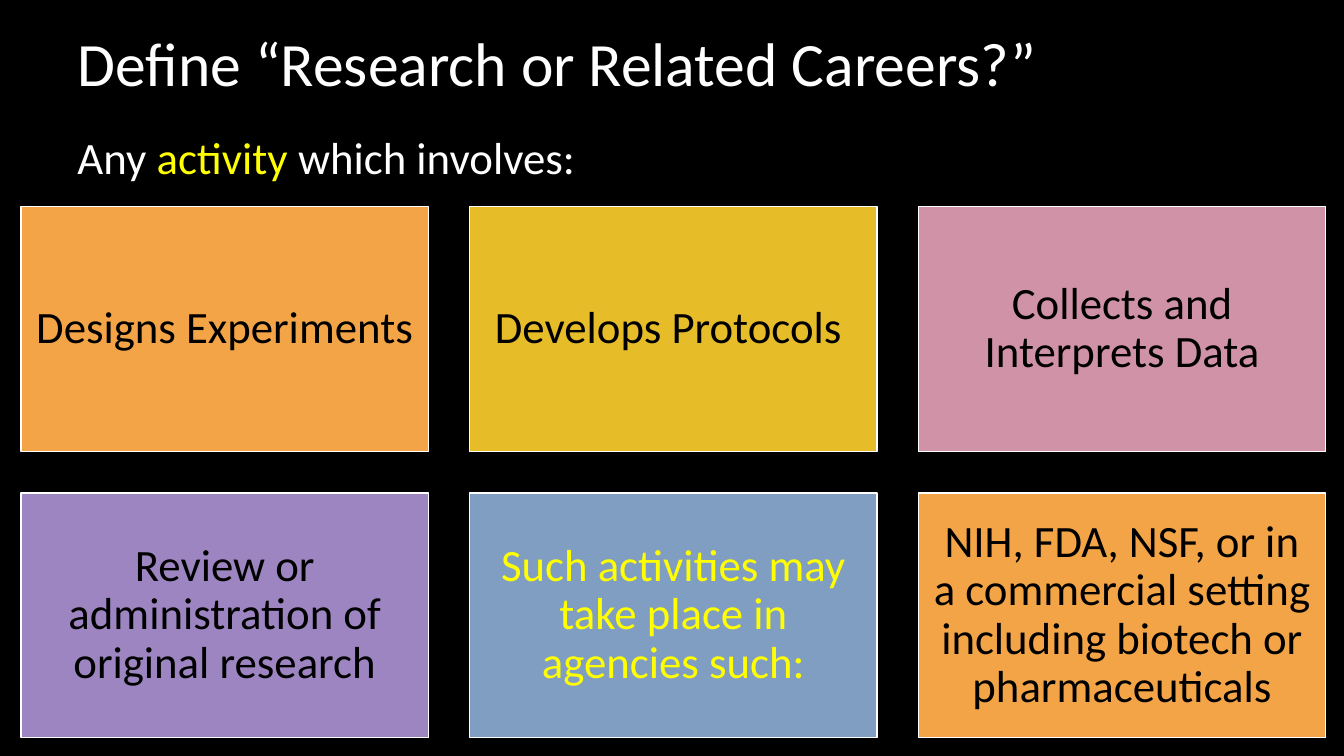
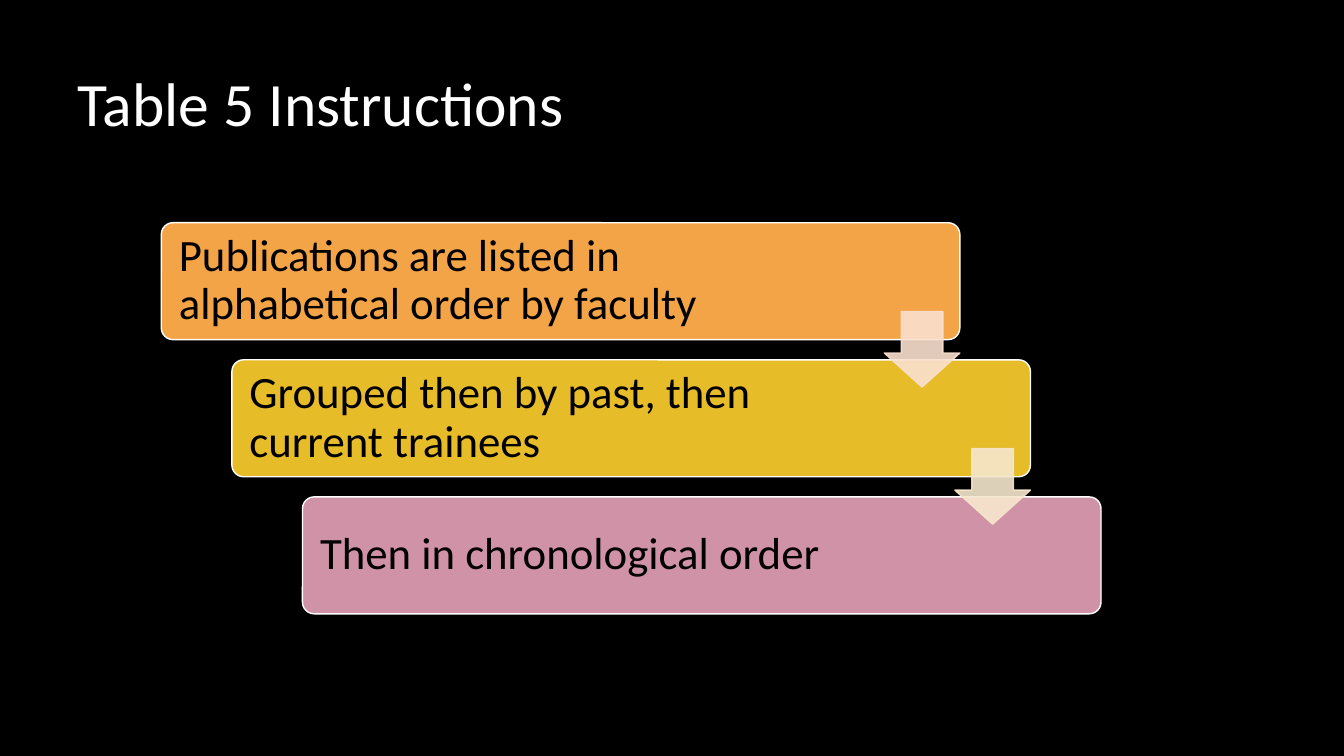
from dataclasses import dataclass

import pptx
import pptx.dml.color
import pptx.enum.shapes
import pptx.enum.text
import pptx.oxml.ns
import pptx.presentation
import pptx.shapes.autoshape
import pptx.slide
import pptx.text.text
import pptx.util
from lxml import etree

Inches = pptx.util.Inches
Pt = pptx.util.Pt
Align = pptx.enum.text.PP_ALIGN
Anchor = pptx.enum.text.MSO_ANCHOR
Preset = pptx.enum.shapes.MSO_SHAPE


@dataclass(frozen=True)
class Theme:
    background: str = "000000"
    light: str = "FFFFFF"
    dark: str = "000000"
    highlight: str = "FFFF00"
    orange: str = "F3A447"
    gold: str = "E7BC29"
    pink: str = "D092A7"
    purple: str = "9C85C0"
    blue: str = "809EC2"
    pale_orange: str = "FAE0CF"
    pale_gold: str = "F6E7CD"
    font: str = "Calibri"
    title_size: int = 44
    body_size: int = 32
    line_spacing: float = 0.9
    outline: int = 1


THEME = Theme()


@dataclass(frozen=True)
class Box:
    """Left, top, width and height in inches."""
    left: float
    top: float
    width: float
    height: float

    def lengths(self) -> tuple[int, int, int, int]:
        return (Inches(self.left), Inches(self.top),
                Inches(self.width), Inches(self.height))


@dataclass(frozen=True)
class Card:
    text: str
    fill: str
    color: str = THEME.dark


@dataclass(frozen=True)
class Step:
    text: str
    fill: str
    right_inset: float
    arrow: str = ""


CARDS = [
    Card("Designs Experiments", THEME.orange),
    Card("Develops Protocols ", THEME.gold),
    Card("Collects and Interprets Data", THEME.pink),
    Card("Review or administration of original research", THEME.purple),
    Card("Such activities may take place in agencies such:", THEME.blue,
         THEME.highlight),
    Card("NIH, FDA, NSF, or in a commercial setting including biotech or "
         "pharmaceuticals", THEME.orange),
]
CARD_COLUMNS = 3
FIRST_CARD = Box(0.21, 2.05, 4.04, 2.43)
CARD_GAP = 0.41
CARD_INSET = 0.13

STEPS = [
    Step("Publications are listed in alphabetical order by faculty",
         THEME.orange, 1.32, THEME.pale_orange),
    Step("Grouped then by past, then current trainees",
         THEME.gold, 1.59, THEME.pale_gold),
    Step("Then in chronological order", THEME.pink, 1.59),
]
FIRST_STEP = Box(1.6, 2.21, 7.92, 1.16)
STEP_SHIFT = 0.7
STEP_GAP = 0.2
STEP_INSET = 0.14
ARROW_SIZE = 0.75
ARROW_OFFSET = (7.17, 0.88)
ARROW_OPACITY = 90


def rgb(color: str) -> pptx.dml.color.RGBColor:
    return pptx.dml.color.RGBColor.from_string(color)


def format_runs(paragraph: pptx.text.text._Paragraph, size: int,
                color: str) -> None:
    for run in paragraph.runs:
        run.font.name = THEME.font
        run.font.size = Pt(size)
        run.font.color.rgb = rgb(color)


def add_titled_slide(prs: pptx.presentation.Presentation, text: str,
                     top: float, height: float) -> pptx.slide.Slide:
    slide = prs.slides.add_slide(prs.slide_layouts.get_by_name("Title Only"))
    title = slide.shapes.title
    title.left, title.top, title.width, title.height = Box(
        0.67, top, 12, height).lengths()
    frame = title.text_frame
    frame.text = text
    frame.auto_size = pptx.enum.text.MSO_AUTO_SIZE.NONE
    frame.vertical_anchor = Anchor.MIDDLE
    paragraph = frame.paragraphs[0]
    paragraph.alignment = Align.LEFT
    paragraph.line_spacing = THEME.line_spacing
    format_runs(paragraph, THEME.title_size, THEME.light)
    return slide


def add_filled_shape(slide: pptx.slide.Slide, preset: Preset, box: Box,
                     fill: str, line: str) -> pptx.shapes.autoshape.Shape:
    shape = slide.shapes.add_shape(preset, *box.lengths())
    shape.shadow.inherit = False
    shape.fill.solid()
    shape.fill.fore_color.rgb = rgb(fill)
    shape.line.color.rgb = rgb(line)
    shape.line.width = Pt(THEME.outline)
    return shape


def write_label(shape: pptx.shapes.autoshape.Shape, text: str, color: str,
                alignment: Align, inset: float, right_inset: float) -> None:
    frame = shape.text_frame
    frame.text = text
    frame.word_wrap = True
    frame.vertical_anchor = Anchor.MIDDLE
    frame.margin_left = frame.margin_top = frame.margin_bottom = Inches(inset)
    frame.margin_right = Inches(right_inset)
    paragraph = frame.paragraphs[0]
    paragraph.alignment = alignment
    paragraph.line_spacing = THEME.line_spacing
    format_runs(paragraph, THEME.body_size, color)


def set_opacity(shape: pptx.shapes.autoshape.Shape, percent: int) -> None:
    """Make both the fill and the outline partly transparent."""
    qn = pptx.oxml.ns.qn
    for color in shape.element.spPr.iter(qn("a:srgbClr")):
        etree.SubElement(color, qn("a:alpha")).set("val", str(percent * 1000))


def add_down_arrow(slide: pptx.slide.Slide, step_box: Box, color: str) -> None:
    across, down = ARROW_OFFSET
    box = Box(step_box.left + across, step_box.top + down,
              ARROW_SIZE, ARROW_SIZE)
    arrow = add_filled_shape(slide, Preset.DOWN_ARROW, box, color, color)
    arrow.adjustments[0] = 0.55
    arrow.adjustments[1] = 0.45
    set_opacity(arrow, ARROW_OPACITY)


def build_definition(prs: pptx.presentation.Presentation) -> None:
    slide = add_titled_slide(
        prs, "Define “Research or Related Careers?”", 0.23, 0.87)
    for index, card in enumerate(CARDS):
        row, column = divmod(index, CARD_COLUMNS)
        box = Box(FIRST_CARD.left + column * (FIRST_CARD.width + CARD_GAP),
                  FIRST_CARD.top + row * (FIRST_CARD.height + CARD_GAP),
                  FIRST_CARD.width, FIRST_CARD.height)
        panel = add_filled_shape(slide, Preset.RECTANGLE, box, card.fill,
                                 THEME.light)
        write_label(panel, card.text, card.color, Align.CENTER,
                    CARD_INSET, CARD_INSET)

    lead_in = slide.shapes.add_textbox(*Box(0.67, 1.24, 6.67, 0.64).lengths())
    lead_in.text_frame.word_wrap = True
    sentence = lead_in.text_frame.paragraphs[0]
    for part in ("Any ", "activity", " which involves:"):
        sentence.add_run().text = part
    format_runs(sentence, THEME.body_size, THEME.light)
    sentence.runs[1].font.color.rgb = rgb(THEME.highlight)


def build_instructions(prs: pptx.presentation.Presentation) -> None:
    slide = add_titled_slide(prs, "Table 5 Instructions", 0.59, 0.93)
    boxes = [Box(FIRST_STEP.left + index * STEP_SHIFT,
                 FIRST_STEP.top + index * (FIRST_STEP.height + STEP_GAP),
                 FIRST_STEP.width, FIRST_STEP.height)
             for index in range(len(STEPS))]
    for step, box in zip(STEPS, boxes):
        panel = add_filled_shape(slide, Preset.ROUNDED_RECTANGLE, box,
                                 step.fill, THEME.light)
        panel.adjustments[0] = 0.1
        write_label(panel, step.text, THEME.dark, Align.LEFT,
                    STEP_INSET, step.right_inset)
    for step, box in zip(STEPS, boxes):
        if step.arrow:
            add_down_arrow(slide, box, step.arrow)


def main() -> None:
    prs = pptx.Presentation()
    prs.slide_width = Inches(13.33)
    prs.slide_height = Inches(7.5)
    backdrop = prs.slide_master.background.fill
    backdrop.solid()
    backdrop.fore_color.rgb = rgb(THEME.background)
    build_definition(prs)
    build_instructions(prs)
    prs.save("out.pptx")


if __name__ == "__main__":
    main()
